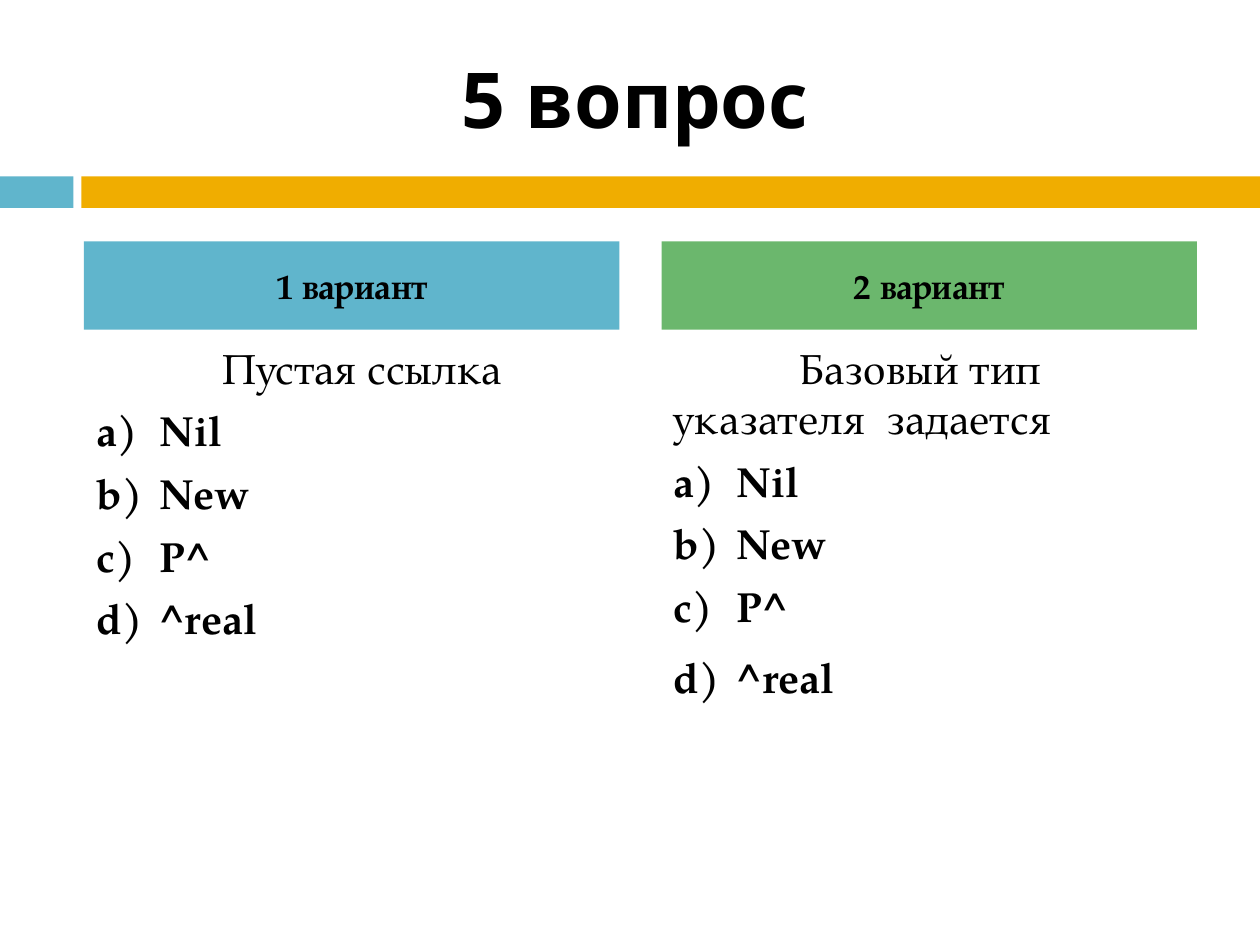
"""Build a quiz slide with two variants of a question."""
from dataclasses import dataclass

from lxml.etree import SubElement
from pptx import Presentation
from pptx.dml.color import RGBColor
from pptx.enum.shapes import MSO_SHAPE
from pptx.enum.text import MSO_ANCHOR, PP_ALIGN
from pptx.oxml.ns import qn
from pptx.util import Pt

COLORS = {"text": "000000", "blue": "60B5CC", "orange": "F0AD00", "green": "6BB76D"}
HEAD_FONT = "Noto Sans"
BODY_FONT = "TeX Gyre Pagella"
ANSWERS = ("Nil", "New", "P^", "^real")
COL_LEFT, COL_STEP, COL_W = 48, 330, 306


@dataclass(frozen=True)
class Variant:
    title: str
    color: str
    question: str
    last_gap: float


VARIANTS = (
    Variant("1 вариант", "blue", "Пустая ссылка", 7),
    Variant("2 вариант", "green", "Базовый тип указателя  задается", 12),
)


def add_text(p, text: str, size: float, font: str, bold: bool) -> None:
    r = p.add_run()
    r.text = text
    r.font.size, r.font.name, r.font.bold = Pt(size), font, bold
    r.font.color.rgb = RGBColor.from_string(COLORS["text"])


def add_bar(s, x: float, y: float, w: float, h: float, color: str):
    sp = s.shapes.add_shape(MSO_SHAPE.RECTANGLE, Pt(x), Pt(y), Pt(w), Pt(h))
    sp.shadow.inherit = False
    sp.fill.solid()
    sp.fill.fore_color.rgb = RGBColor.from_string(COLORS[color])
    sp.line.fill.background()
    return sp


def add_box(s, x: float, y: float, w: float, h: float):
    sp = s.shapes.add_textbox(Pt(x), Pt(y), Pt(w), Pt(h))
    sp.text_frame.word_wrap = True
    return sp


def add_centered(sp, text: str, size: float, font: str) -> None:
    tf = sp.text_frame
    tf.vertical_anchor = MSO_ANCHOR.MIDDLE
    p = tf.paragraphs[0]
    p.alignment = PP_ALIGN.CENTER
    add_text(p, text, size, font, True)


def set_indent(p, left: float, first: float) -> None:
    pPr = p._p.get_or_add_pPr()
    pPr.set("marL", str(Pt(left)))
    pPr.set("indent", str(Pt(first)))


def add_answer(tf, text: str, gap: float) -> None:
    p = tf.add_paragraph()
    p.space_before = Pt(gap)
    set_indent(p, 36, -36)
    pPr = p._p.get_or_add_pPr()
    clr = SubElement(pPr, qn("a:buClr"))
    SubElement(clr, qn("a:srgbClr"), val=COLORS["text"])
    SubElement(pPr, qn("a:buFont"), typeface=BODY_FONT)
    SubElement(pPr, qn("a:buAutoNum"), type="alphaLcParenR")
    add_text(p, text, 24, BODY_FONT, True)


def add_variant(s, x: float, v: Variant) -> None:
    add_centered(add_bar(s, x, 138, COL_W, 50.4, v.color), v.title, 20, BODY_FONT)
    tf = add_box(s, x, 192, COL_W, 282).text_frame
    p = tf.paragraphs[0]
    set_indent(p, 0, 72)
    add_text(p, v.question, 24, BODY_FONT, False)
    for text in ANSWERS:
        add_answer(tf, text, v.last_gap if text == ANSWERS[-1] else 7)


def main() -> None:
    prs = Presentation()
    prs.slide_width, prs.slide_height = Pt(720), Pt(540)
    s = prs.slides.add_slide(prs.slide_layouts[6])
    add_bar(s, 0, 100.8, 42, 18, "blue")
    add_bar(s, 46.5, 100.8, 673.5, 18, "orange")
    add_centered(add_box(s, 42, 21.6, 642, 68.4), "5 вопрос", 44, HEAD_FONT)
    for i, v in enumerate(VARIANTS):
        add_variant(s, COL_LEFT + i * COL_STEP, v)
    prs.save("out.pptx")


if __name__ == "__main__":
    main()
